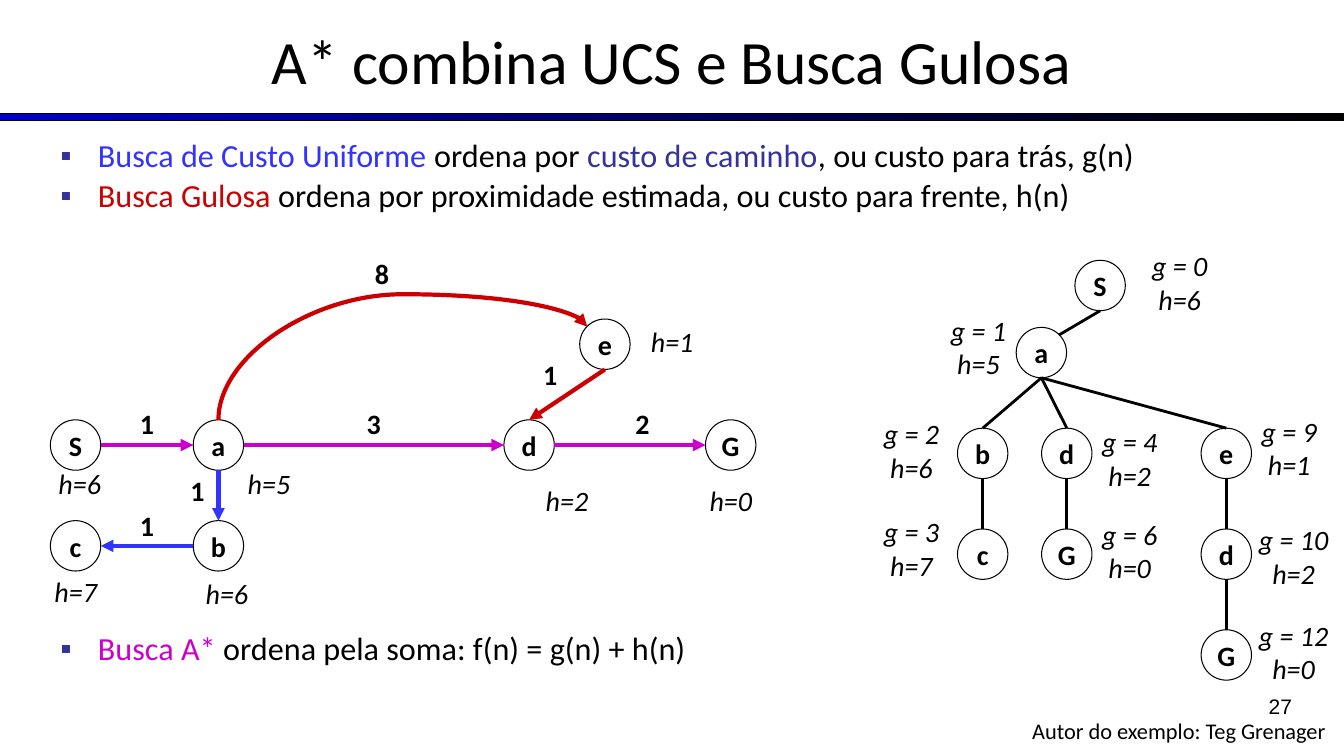
from dataclasses import dataclass
from lxml.etree import SubElement as Sub
from pptx import Presentation
from pptx.dml.color import RGBColor as Rgb
from pptx.enum.shapes import MSO_CONNECTOR as Link, MSO_SHAPE as Form
from pptx.enum.text import MSO_ANCHOR as Anchor, PP_ALIGN as Align
from pptx.oxml.ns import qn
from pptx.util import Cm, Pt


@dataclass(frozen=True)
class Theme:
    black: str = "000000"
    white: str = "FFFFFF"
    bar: str = "0000CC"
    navy: str = "333399"
    blue: str = "3333FF"
    red: str = "CC0000"
    pink: str = "CC00CC"
    font: str = "Calibri"
    digit: str = "Arial"
    head: int = 44
    body: int = 23
    mark: int = 20
    note: int = 16
    page: int = 15


look = Theme()
side = 1.27
wide = 33.87
ports = {"T": (.5, 0), "L": (0, .5), "B": (.5, 1), "R": (1, .5),
         "NW": (.15, .15), "NE": (.85, .15)}


def ink(code):
    return Rgb.from_string(code)


def style(run, size, color=look.black, font=look.font, bold=False, slant=False):
    face = run.font
    face.name, face.size = font, Pt(size)
    face.bold, face.italic = bold, slant
    face.color.rgb = ink(color)


def write(slide, box, text, size, align=Align.CENTER, anchor=Anchor.TOP, **kind):
    frame = slide.shapes.add_textbox(*map(Cm, box)).text_frame
    frame.word_wrap = True
    frame.vertical_anchor = anchor
    frame.text = text
    line = frame.paragraphs[0]
    line.alignment = align
    style(line.runs[0], size, **kind)


def label(slide, x, y, text, width=2.2, height=1.1, **kind):
    write(slide, (x - width / 2, y, width, height), text, look.mark, **kind)


def node(slide, x, y, text):
    disc = slide.shapes.add_shape(Form.OVAL, *map(Cm, (x, y, side, side)))
    disc.shadow.inherit = False
    disc.fill.solid()
    disc.fill.fore_color.rgb = ink(look.white)
    disc.line.color.rgb = ink(look.black)
    disc.line.width = Pt(.75)
    frame = disc.text_frame
    frame.word_wrap = False
    frame.vertical_anchor = Anchor.MIDDLE
    frame.text = text
    frame.paragraphs[0].alignment = Align.CENTER
    style(frame.paragraphs[0].runs[0], look.mark, bold=True)


def port(spot, name):
    return [base + side * part for base, part in zip(spot, ports[name])]


def link(slide, start, end, color, width, arrow=False, kind=Link.STRAIGHT):
    line = slide.shapes.add_connector(kind, *map(Cm, (*start, *end)))
    line.line.color.rgb = ink(color)
    line.line.width = Pt(width)
    props = line._element.spPr
    if arrow:
        Sub(props.find(qn("a:ln")), qn("a:tailEnd"), type="triangle")
    Sub(props, qn("a:effectLst"))
    return props


def arc(slide, start, end, color):
    mid = [(a + b) / 2 for a, b in zip(start, end)]
    rise = (start[1] - end[1]) / 2
    run = (end[0] - start[0]) / 2
    props = link(slide, (mid[0] - rise, mid[1] - run),
                 (mid[0] + rise, mid[1] + run), color, 3, True, Link.CURVE)
    props.find(qn("a:xfrm")).set("rot", "16200000")
    guides = props.find(qn("a:prstGeom")).get_or_add_avLst()
    Sub(guides, qn("a:gd"), name="adj1", fmla="val 134800")


def header(slide, left, top, width):
    bar = slide.shapes.add_shape(Form.RECTANGLE, *map(Cm, (left, top + 2.87, width, .18)))
    bar.shadow.inherit = False
    bar.fill.gradient()
    bar.fill.gradient_angle = 0
    for stop, code in zip(bar.fill.gradient_stops, (look.bar, look.black)):
        stop.color.rgb = ink(code)
    bar.line.color.rgb = ink(look.black)
    bar.line.width = Pt(.75)
    write(slide, (left, top - .08, width, 3.18), "A* combina UCS e Busca Gulosa",
          look.head, anchor=Anchor.MIDDLE)


def points(slide, box, rows):
    frame = slide.shapes.add_textbox(*map(Cm, box)).text_frame
    frame.word_wrap = True
    for i, row in enumerate(rows):
        line = frame.add_paragraph() if i else frame.paragraphs[0]
        line.line_spacing = .9
        line.space_before = Pt(4)
        props = line._p.get_or_add_pPr()
        props.set("marL", str(Cm(.95)))
        props.set("indent", str(Cm(-.95)))
        Sub(Sub(props, qn("a:buClr")), qn("a:srgbClr"), val=look.navy)
        Sub(props, qn("a:buFont"), typeface=look.digit)
        Sub(props, qn("a:buChar"), char="▪")
        for text, color in row:
            run = line.add_run()
            run.text = text
            style(run, look.body, color)


def graph(slide, left, top):
    nodes = {
        "S": (0, 2.54, "h=6", .74, 1.05), "a": (3.6, 2.54, "h=5", 1.91, 1.05),
        "d": (11.43, 2.54, "h=2", 1.59, 1.48), "G": (16.51, 2.54, "h=0", .64, 1.48),
        "b": (3.6, 5.08, "h=6", .85, 1.27), "c": (0, 5.08, "h=7", .64, 1.23),
        "e": (13.34, 0, "h=1", 2.33, 0)}
    edges = [
        ("a", "B", "b", "T", look.blue, "1", -.53, -.68),
        ("b", "L", "c", "R", look.blue, "1", 0, -1.06),
        ("e", "B", "d", "T", look.red, "1", -.42, -1.06),
        ("d", "R", "G", "L", look.pink, "2", .32, -1.1),
        ("S", "R", "a", "L", look.pink, "1", 0, -1.1),
        ("a", "R", "d", "L", look.pink, "3", 0, -1.1)]
    spots = {}
    for name, (x, y, cost, dx, dy) in nodes.items():
        x, y = spots[name] = left + x, top + y
        node(slide, x, y, name)
        label(slide, x + dx, y + dy, cost, slant=True)
    for head, out, tail, into, color, cost, dx, dy in edges:
        start, end = port(spots[head], out), port(spots[tail], into)
        link(slide, start, end, color, 3, True)
        label(slide, (start[0] + end[0]) / 2 + dx, (start[1] + end[1]) / 2 + dy,
              cost, 1.4, bold=True)
    arc(slide, port(spots["a"], "T"), port(spots["e"], "NW"), look.red)
    label(slide, left + 8.36, top - 1.69, "8", 1.4, bold=True)


def tree(slide, left, top):
    nodes = {
        "S": (2.96, 0, "g = 0 h=6", 2.64, -.42),
        "a": (1.48, 1.69, "g = 1 h=5", -.95, -.48),
        "b": (0, 4.23, "g = 2 h=6", -1.16, -.42),
        "c": (0, 6.77, "g = 3 h=7", -1.16, -.48),
        "d": (2.12, 4.23, "g = 4 h=2", 2.22, -.21),
        "G": (2.12, 6.77, "g = 6 h=0", 2.22, -.42),
        "e": (6.14, 4.23, "g = 9 h=1", 2.22, -.48),
        "d2": (6.14, 6.77, "g = 10 h=2", 2.33, -.28),
        "G2": (6.14, 9.31, "g = 12 h=0", 2.33, -.42)}
    edges = [("S", "a", "NE"), *((a, b, "T") for a, b in (
        ("a", "b"), ("a", "d"), ("a", "e"), ("b", "c"),
        ("d", "G"), ("e", "d2"), ("d2", "G2")))]
    spots = {}
    for name, (x, y, cost, dx, dy) in nodes.items():
        x, y = spots[name] = left + x, top + y
        node(slide, x, y, name[0])
        label(slide, x + dx, y + dy, cost, 2.54, 1.96, slant=True)
    for head, tail, into in edges:
        link(slide, port(spots[head], "B"), port(spots[tail], into), look.black, 2)


def footer(slide, left, top):
    write(slide, (left, top, 5.93, 1.32), "27", look.page, Align.RIGHT, font=look.digit)
    write(slide, (left - 1.48, top + .58, 8.26, .94), "Autor do exemplo: Teg Grenager",
          look.note, Align.RIGHT)


def main():
    deck = Presentation()
    deck.slide_width, deck.slide_height = Cm(wide), Cm(19.05)
    slide = deck.slides.add_slide(deck.slide_layouts[6])
    header(slide, 0, 0, wide)
    points(slide, (1.27, 3.39, 27.74, 2.4), [
        [("Busca de Custo Uniforme ", look.blue), ("ordena por ", look.black),
         ("custo de caminho", look.navy), (", ou custo para trás, g(n)", look.black)],
        [("Busca Gulosa ", look.red),
         ("ordena por proximidade estimada, ou custo para frente, h(n)", look.black)]])
    points(slide, (1.27, 15.83, 20, 1.3), [
        [("Busca A* ", look.pink), ("ordena pela soma: f(n) = g(n) + h(n)", look.black)]])
    graph(slide, 1.27, 8.04)
    tree(slide, 24.13, 6.56)
    footer(slide, 26.88, 17.36)
    deck.save("out.pptx")


if __name__ == "__main__":
    main()
